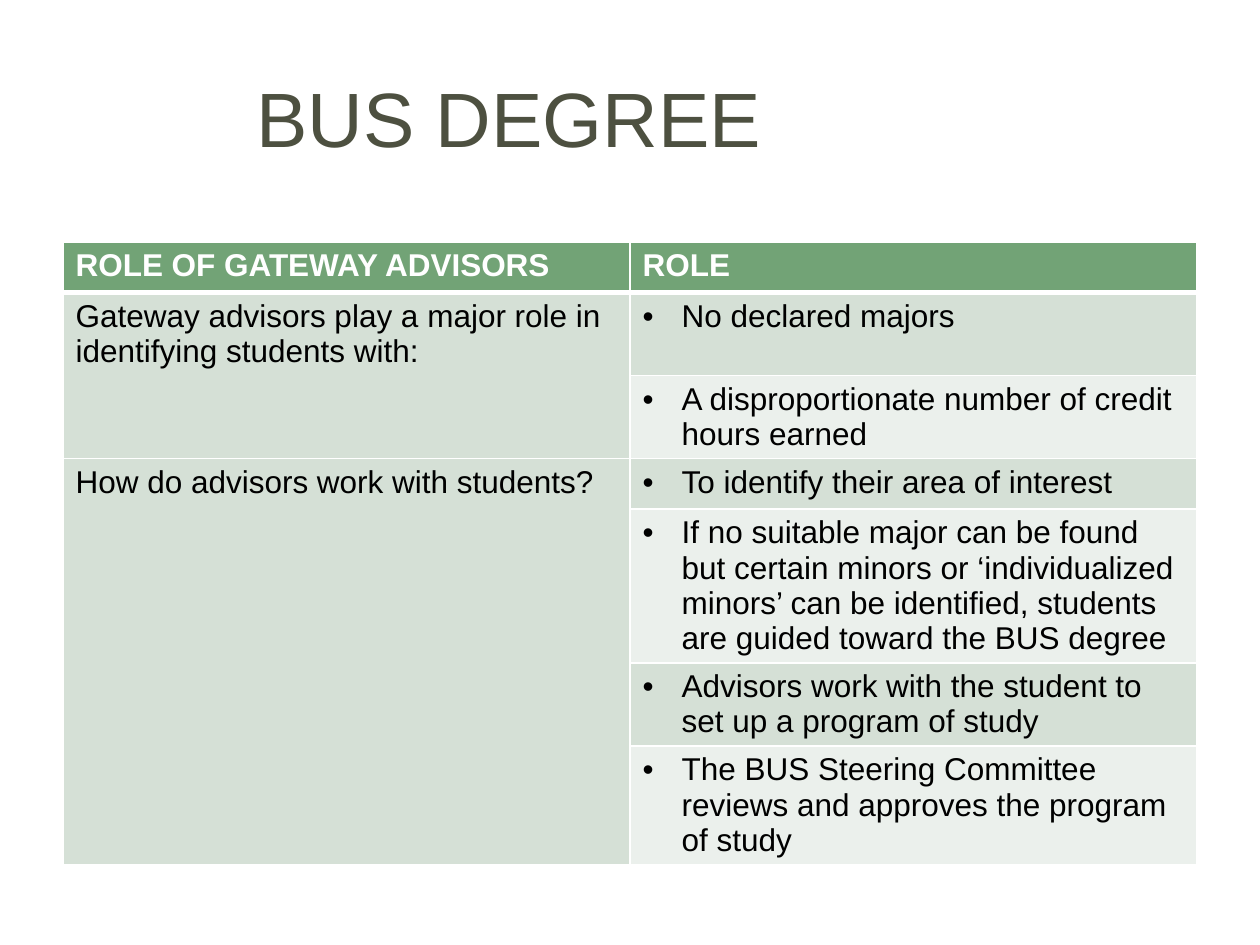
from lxml.etree import SubElement
from pptx import Presentation
from pptx.dml.color import RGBColor
from pptx.enum.text import MSO_ANCHOR, PP_ALIGN
from pptx.oxml.ns import qn
from pptx.util import Inches, Pt

FONT = "Arial"
WHITE, BLACK, TITLE_COLOR = "FFFFFF", "000000", "4D5040"
HEADER_FILL, BAND_FILLS = "72A376", ("D5E0D6", "EBF0EC")
HEADERS = ("ROLE OF GATEWAY ADVISORS", "ROLE")
TOPICS = (
    ("Gateway advisors play a major role in identifying students with:", (
        "No declared majors",
        "A disproportionate number of credit hours earned",
    )),
    ("How do advisors work with students?", (
        "To identify their area of interest",
        "If no suitable major can be found but certain minors or ‘individualized minors’ "
        "can be identified, students are guided toward the BUS degree",
        "Advisors work with the student to set up a program of study",
        "The BUS Steering Committee reviews and approves the program of study",
    )),
)
ROW_HEIGHTS = (0.4, 0.66, 0.66, 0.4, 1.22, 0.66, 0.94)


def color(value):
    return RGBColor.from_string(value)


def format_runs(paragraph, size, font_color, bold=False):
    for run in paragraph.runs:
        run.font.name = FONT
        run.font.size = Pt(size)
        run.font.bold = bold
        run.font.color.rgb = color(font_color)


def add_title(slide, text):
    title = slide.shapes.title
    title.left, title.top = Inches(0.5), Inches(0.3)
    title.width, title.height = Inches(7.08), Inches(1.25)
    title.text_frame.text = text
    title.text_frame.vertical_anchor = MSO_ANCHOR.MIDDLE
    paragraph = title.text_frame.paragraphs[0]
    paragraph.alignment = PP_ALIGN.CENTER
    format_runs(paragraph, 44, TITLE_COLOR)


def add_borders(cell, bottom, top):
    properties = cell._tc.get_or_add_tcPr()
    for side, width in (("L", 1), ("R", 1), ("T", top), ("B", bottom)):
        line = SubElement(properties, qn(f"a:ln{side}"), w=str(Pt(width)))
        SubElement(SubElement(line, qn("a:solidFill")), qn("a:srgbClr"), val=WHITE)


def style_cell(cell, row, fill):
    add_borders(cell, bottom=3 if row == 0 else 1, top=3 if row == 1 else 1)
    cell.fill.solid()
    cell.fill.fore_color.rgb = color(fill)


def write_cell(cell, text, font_color=BLACK, bold=False, bullet=False):
    cell.text_frame.text = text
    paragraph = cell.text_frame.paragraphs[0]
    if bullet:
        properties = paragraph._p.get_or_add_pPr()
        indent = Inches(0.31)
        properties.set("marL", str(indent))
        properties.set("indent", str(-indent))
        SubElement(properties, qn("a:buFont"), typeface=FONT)
        SubElement(properties, qn("a:buChar"), char="•")
    format_runs(paragraph, 18, font_color, bold)


def add_role_table(slide):
    table = slide.shapes.add_table(
        len(ROW_HEIGHTS), len(HEADERS),
        Inches(0.5), Inches(1.92), Inches(9), Inches(sum(ROW_HEIGHTS)),
    ).table
    for row, height in enumerate(ROW_HEIGHTS):
        table.rows[row].height = Inches(height)
        band = HEADER_FILL if row == 0 else BAND_FILLS[(row - 1) % 2]
        for column in range(len(HEADERS)):
            style_cell(table.cell(row, column), row, band)
    for column, header in enumerate(HEADERS):
        write_cell(table.cell(0, column), header, WHITE, bold=True)
    first_row = 1
    for topic, roles in TOPICS:
        topic_cell = table.cell(first_row, 0)
        topic_cell.merge(table.cell(first_row + len(roles) - 1, 0))
        write_cell(topic_cell, topic)
        for row, role in enumerate(roles, first_row):
            write_cell(table.cell(row, 1), role, bullet=True)
        first_row += len(roles)


def main():
    presentation = Presentation()
    presentation.slide_width, presentation.slide_height = Inches(10), Inches(7.5)
    slide = presentation.slides.add_slide(presentation.slide_layouts[5])
    add_title(slide, "BUS DEGREE")
    add_role_table(slide)
    presentation.save("out.pptx")


if __name__ == "__main__":
    main()
